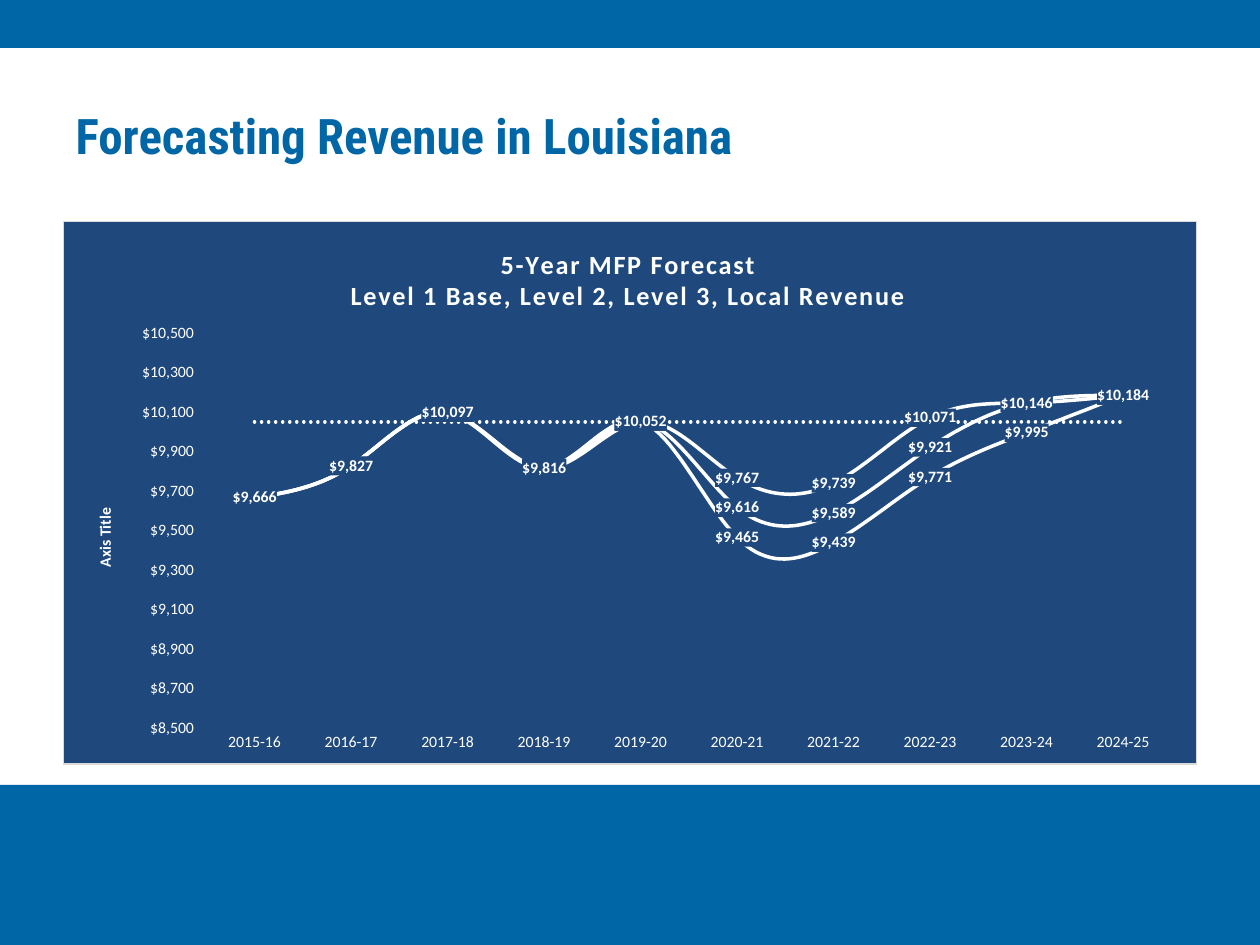
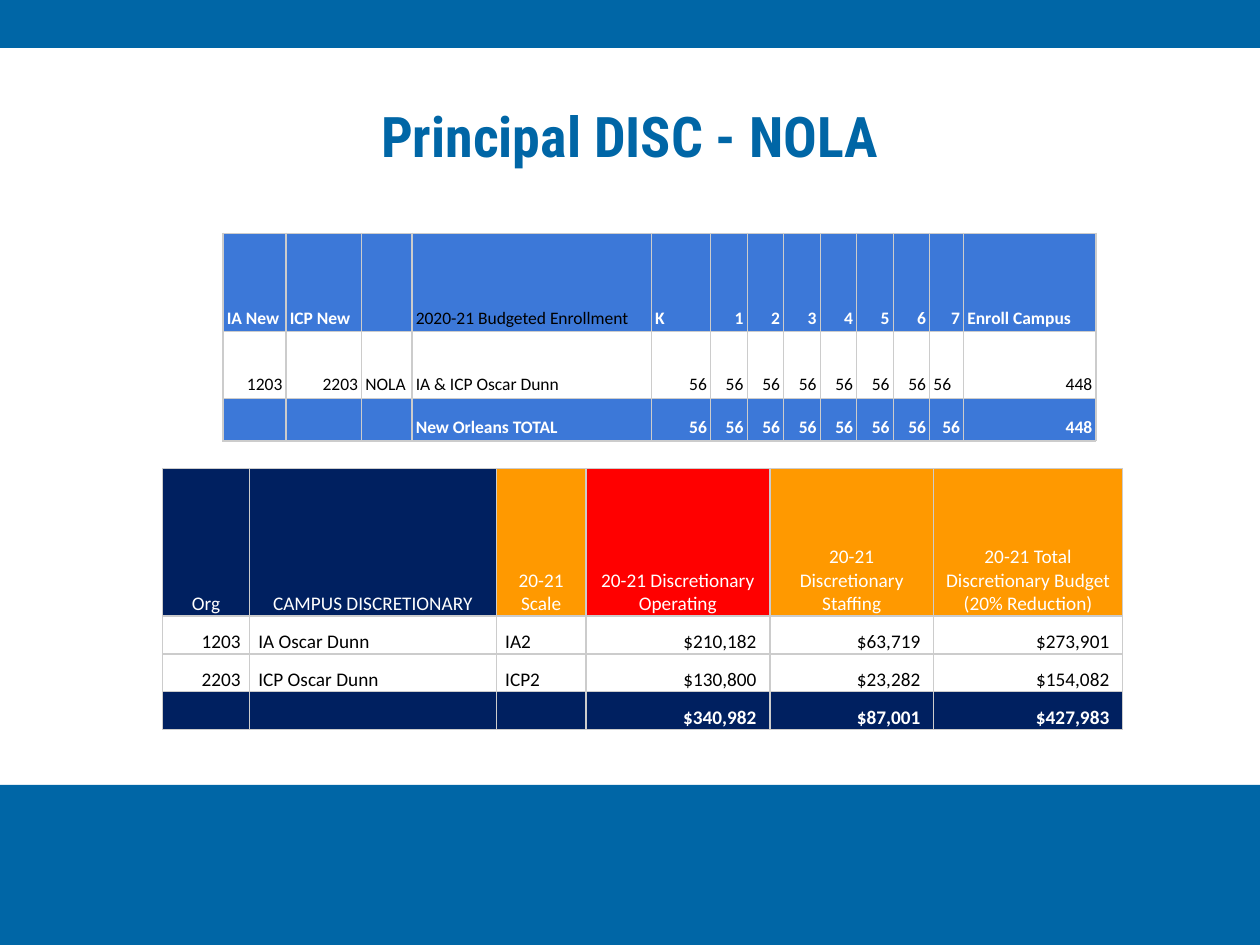
import pptx
import pptx.chart.data
import pptx.dml.color
import pptx.enum.chart
import pptx.enum.dml
import pptx.enum.shapes
import pptx.enum.text
import pptx.oxml
import pptx.oxml.ns
import pptx.util

Inches, Pt = pptx.util.Inches, pptx.util.Pt
ALIGN = pptx.enum.text.PP_ALIGN
ALIGNMENTS = {"l": ALIGN.LEFT, "c": ALIGN.CENTER, "r": ALIGN.RIGHT}

BRAND_BLUE = "0066A6"
CHART_BLUE = "1F497D"
TABLE_BLUE = "3C78D8"
NAVY = "002060"
ORANGE = "FF9900"
RED = "FF0000"
WHITE = "FFFFFF"
BLACK = "000000"
CELL_BORDER = "CCCCCC"
CHART_BORDER = "D9D9D9"

TITLE_FONT = "Roboto Condensed"
BODY_FONT = "Calibri"
DOLLARS = '"$"#,##0'


def rgb(hex_colour):
    return pptx.dml.color.RGBColor.from_string(hex_colour)


def xml(tag, content, attributes=""):
    """Parse one element whose children may use the a: and c: prefixes."""
    namespaces = pptx.oxml.ns.nsdecls("a", "c")
    return pptx.oxml.parse_xml(f"<{tag} {namespaces} {attributes}>{content}</{tag}>")


def solid_fill(hex_colour):
    return f'<a:solidFill><a:srgbClr val="{hex_colour}"/></a:solidFill>'


def set_font(font, size, colour, bold=False, name=BODY_FONT):
    font.name = name
    font.size = Pt(size)
    font.bold = bold
    font.color.rgb = rgb(colour)


def add_band(slide, top, height):
    band = slide.shapes.add_shape(
        pptx.enum.shapes.MSO_SHAPE.RECTANGLE, 0, Inches(top), Inches(10), Inches(height))
    band.shadow.inherit = False
    band.fill.solid()
    band.fill.fore_color.rgb = rgb(BRAND_BLUE)
    band.line.fill.background()


def add_titled_slide(presentation, text, size, alignment):
    slide = presentation.slides.add_slide(presentation.slide_layouts[5])
    add_band(slide, 0, 0.38)
    add_band(slide, 6.23, 1.27)
    title = slide.shapes.title
    title.left, title.top = Inches(0.5), Inches(0.59)
    title.width, title.height = Inches(9), Inches(0.96)
    frame = title.text_frame
    frame.text = text
    frame.auto_size = pptx.enum.text.MSO_AUTO_SIZE.NONE
    frame.vertical_anchor = pptx.enum.text.MSO_ANCHOR.MIDDLE
    paragraph = frame.paragraphs[0]
    paragraph.alignment = alignment
    set_font(paragraph.font, size, BRAND_BLUE, True, TITLE_FONT)
    return slide


def manual_layout(x, y, size=None):
    """Place a chart part by fractions of the chart area."""
    values = '<c:layoutTarget val="inner"/>' if size else ""
    values += '<c:xMode val="edge"/><c:yMode val="edge"/>'
    values += f'<c:x val="{x}"/><c:y val="{y}"/>'
    if size:
        values += f'<c:w val="{size[0]}"/><c:h val="{size[1]}"/>'
    return xml("c:layout", f"<c:manualLayout>{values}</c:manualLayout>")


def replace_layout(parent, layout, after=None):
    for old in parent.findall(pptx.oxml.ns.qn("c:layout")):
        parent.remove(old)
    if after is None:
        parent.insert(0, layout)
    else:
        after.addnext(layout)


def add_chart_title(chart, lines):
    frame = chart.chart_title.text_frame
    for index, line in enumerate(lines):
        paragraph = frame.add_paragraph() if index else frame.paragraphs[0]
        run = paragraph.add_run()
        run.text = line
        set_font(run.font, 15, WHITE, True)
        run._r.get_or_add_rPr().set("spc", "100")
    title = chart.chart_title._element
    replace_layout(title, manual_layout(0.25, 0.04), title.find(pptx.oxml.ns.qn("c:tx")))


def format_series(series, dotted=False):
    series.smooth = True
    series.marker.style = pptx.enum.chart.XL_MARKER_STYLE.NONE
    line = series.format.line
    line.color.rgb = rgb(WHITE)
    line.width = Pt(2)
    line._get_or_add_ln().set("cap", "rnd")
    if dotted:
        line.dash_style = pptx.enum.dml.MSO_LINE.ROUND_DOT
        return
    labels = series.data_labels
    labels.show_value = True
    labels.position = pptx.enum.chart.XL_LABEL_POSITION.CENTER
    labels.number_format = DOLLARS
    labels.number_format_is_linked = False
    set_font(labels.font, 9, WHITE, True)
    number_format = labels._element.find(pptx.oxml.ns.qn("c:numFmt"))
    number_format.addnext(xml("c:spPr", solid_fill(CHART_BLUE)))


def format_axis(axis, tick_mark):
    axis.has_major_gridlines = False
    axis.major_tick_mark = tick_mark
    axis.format.line.fill.background()
    set_font(axis.tick_labels.font, 9, WHITE)


def add_forecast_chart(slide):
    data = pptx.chart.data.CategoryChartData()
    data.categories = [f"{year}-{year % 100 + 1}" for year in range(2015, 2025)]
    history = [9666, 9827, 10097, 9816, 10052]
    forecasts = [
        [9767, 9739, 10071, 10146, 10184],
        [9616, 9589, 9921, 10146, 10184],
        [9465, 9439, 9771, 9995, 10184],
    ]
    lines = [history + forecast for forecast in forecasts] + [[10050] * 10]
    for number, values in enumerate(lines, 1):
        data.add_series(f"Series {number}", values)

    chart = slide.shapes.add_chart(
        pptx.enum.chart.XL_CHART_TYPE.LINE,
        Inches(0.5), Inches(1.75), Inches(9), Inches(4.32), data).chart
    chart.has_legend = False
    set_font(chart.font, 10, BLACK)
    border = f'<a:ln w="9525">{solid_fill(CHART_BORDER)}</a:ln>'
    chart_space = chart._chartSpace
    chart_space.find(pptx.oxml.ns.qn("c:chart")).addnext(
        xml("c:spPr", solid_fill(CHART_BLUE) + border))
    add_chart_title(chart, ["5-Year MFP Forecast",
                            "Level 1 Base, Level 2, Level 3, Local Revenue"])
    plot_area = chart_space.find(".//" + pptx.oxml.ns.qn("c:plotArea"))
    replace_layout(plot_area, manual_layout(0.126, 0.206, (0.852, 0.728)))

    tick_marks = pptx.enum.chart.XL_TICK_MARK
    format_axis(chart.category_axis, tick_marks.NONE)
    axis = chart.value_axis
    format_axis(axis, tick_marks.OUTSIDE)
    axis.minimum_scale, axis.maximum_scale, axis.major_unit = 8500, 10500, 200
    axis.tick_labels.number_format = DOLLARS
    axis.tick_labels.number_format_is_linked = False
    axis_title = axis.axis_title.text_frame
    axis_title.text = "Axis Title"
    set_font(axis_title.paragraphs[0].runs[0].font, 9, WHITE, True)

    for series in chart.plots[0].series:
        format_series(series, dotted=series.name == "Series 4")


def add_borders(cell, width):
    properties = cell._tc.get_or_add_tcPr()
    for side in ("a:lnL", "a:lnR", "a:lnT", "a:lnB"):
        properties.append(xml(side, solid_fill(CELL_BORDER), f'w="{int(Pt(width))}"'))


def add_grid(slide, left, top, widths, heights, rows, size, margins, border):
    """Each row is (texts, alignment letters, fill or list of fills, text colour, bold)."""
    shape = slide.shapes.add_table(
        len(heights), len(widths), Inches(left), Inches(top),
        Inches(sum(widths)), Inches(sum(heights)))
    table = shape.table
    table.first_row = table.horz_banding = False
    for column, width in zip(table.columns, widths):
        column.width = Inches(width)
    for row, height, (texts, alignments, fills, colour, bold) in zip(
            table.rows, heights, rows):
        row.height = Inches(height)
        if isinstance(fills, str):
            fills = [fills] * len(widths)
        for cell, text, alignment, fill in zip(row.cells, texts, alignments, fills):
            cell.margin_left = cell.margin_right = Inches(margins[0])
            cell.margin_top = cell.margin_bottom = Inches(margins[1])
            cell.vertical_anchor = pptx.enum.text.MSO_ANCHOR.BOTTOM
            add_borders(cell, border)
            cell.fill.solid()
            cell.fill.fore_color.rgb = rgb(fill)
            cell.text = text
            paragraph = cell.text_frame.paragraphs[0]
            paragraph.alignment = ALIGNMENTS[alignment]
            set_font(paragraph.font, size, colour, bold)
    return table


def add_discretionary_table(slide):
    rows = [
        (["Org", "CAMPUS DISCRETIONARY", "20-21 Scale", "20-21 Discretionary Operating",
          "20-21 Discretionary Staffing", "20-21 Total Discretionary Budget (20% Reduction)"],
         "cccccc", [NAVY, NAVY, ORANGE, RED, ORANGE, ORANGE], WHITE, False),
        (["1203", "IA Oscar Dunn", "IA2", "$210,182 ", "$63,719 ", "$273,901 "],
         "rllrrr", WHITE, BLACK, False),
        (["2203", "ICP Oscar Dunn", "ICP2", "$130,800 ", "$23,282 ", "$154,082 "],
         "rllrrr", WHITE, BLACK, False),
        (["", "", "", "$340,982 ", "$87,001 ", "$427,983 "],
         "rllrrr", NAVY, WHITE, True),
    ]
    add_grid(slide, 1.29, 3.72, [0.69, 1.96, 0.71, 1.46, 1.3, 1.5],
             [1.17] + [0.3] * 3, rows, 11, (0.07, 0), 1)


def add_enrollment_table(slide):
    grades = [str(grade) for grade in range(1, 8)]
    enrolled = ["56"] * 8
    rows = [
        (["IA New", "ICP New", "", "2020-21 Budgeted Enrollment", "K", *grades,
          "Enroll Campus"], "lllllrrrrrrrl", TABLE_BLUE, WHITE, True),
        (["1203", "2203", "NOLA", "IA & ICP Oscar Dunn", *enrolled, "448"],
         "rrllrrrrrrrlr", WHITE, BLACK, False),
        (["", "", "", "New Orleans TOTAL", *enrolled, "448"],
         "llllrrrrrrrrr", TABLE_BLUE, WHITE, True),
    ]
    table = add_grid(slide, 1.77, 1.85, [0.5, 0.6, 0.4, 1.9, 0.47] + [0.29] * 6 + [0.27, 1.05],
                     [0.78, 0.53, 0.34], rows, 10, (0.03, 0.02), 0.75)
    set_font(table.cell(0, 3).text_frame.paragraphs[0].font, 10, BLACK)


def main():
    presentation = pptx.Presentation()
    presentation.slide_width, presentation.slide_height = Inches(10), Inches(7.5)

    forecast_slide = add_titled_slide(
        presentation, "Forecasting Revenue in Louisiana", 28, ALIGN.LEFT)
    add_forecast_chart(forecast_slide)

    budget_slide = add_titled_slide(
        presentation, "Principal DISC - NOLA", 32, ALIGN.CENTER)
    add_discretionary_table(budget_slide)
    add_enrollment_table(budget_slide)

    presentation.save("out.pptx")


if __name__ == "__main__":
    main()
